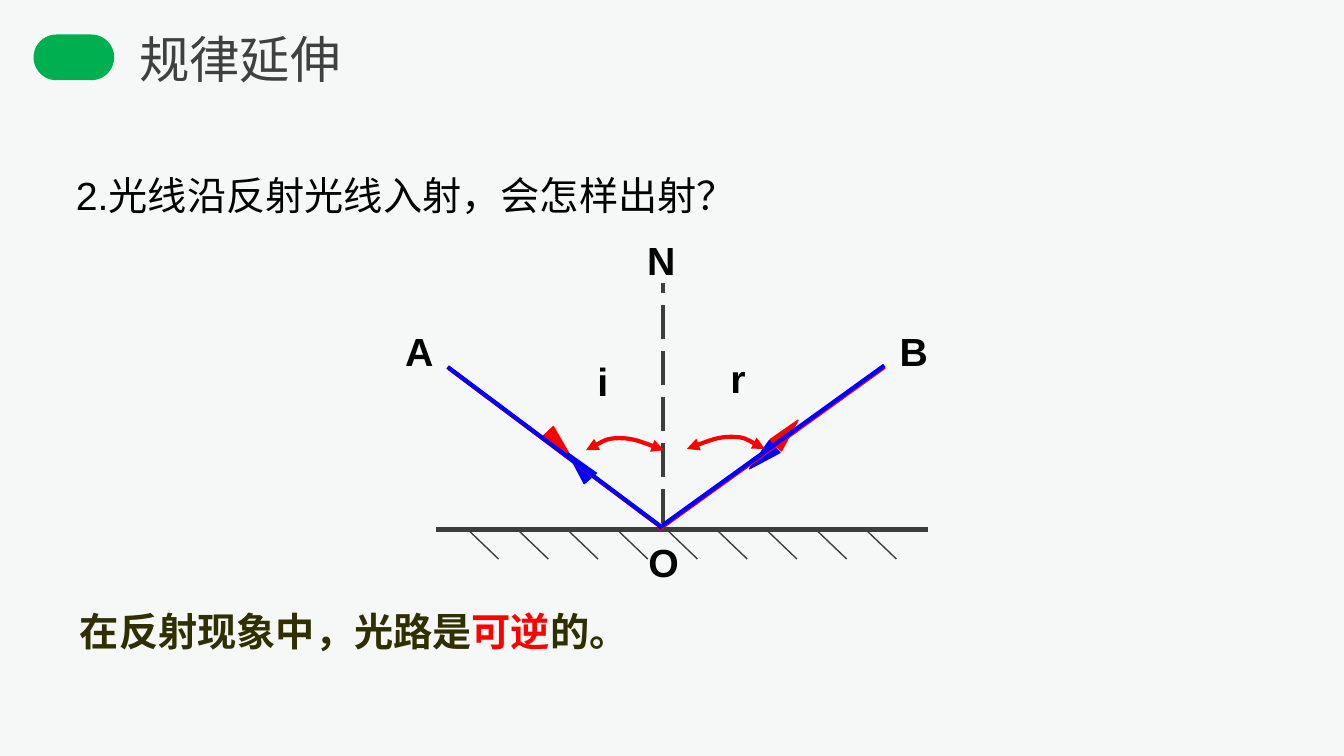
from dataclasses import dataclass

from lxml.etree import SubElement
from pptx import Presentation
from pptx.dml.color import RGBColor
from pptx.enum.dml import MSO_LINE
from pptx.enum.shapes import MSO_CONNECTOR, MSO_SHAPE
from pptx.oxml.ns import qn
from pptx.util import Pt


@dataclass(frozen=True)
class Theme:
    background: str = "F6F8F8"
    badge: str = "00B050"
    heading: str = "404040"
    ink: str = "000000"
    conclusion: str = "2F2F00"
    mirror: str = "3D3D3D"
    red: str = "FF0000"
    blue: str = "0000FF"
    font: str = "Arial"
    heading_size: float = 27
    body_size: float = 21
    thick: float = 2.25
    thin: float = 0.75


@dataclass(frozen=True)
class Label:
    text: str
    left: float
    top: float
    width: float


@dataclass(frozen=True)
class Ray:
    start: tuple[float, float]
    end: tuple[float, float]
    color: str


@dataclass(frozen=True)
class RayTip:
    left: float
    top: float
    rotation: float
    color: str
    apex: float = 0.5


@dataclass(frozen=True)
class AngleArc:
    left_foot: tuple[float, float]
    direction: int


THEME = Theme()

POINT_LABELS = [
    Label("O", 342, 285.8, 28),
    Label("A", 211.7, 172.8, 24.5),
    Label("N", 341.3, 123.8, 24.5),
    Label("B", 476.6, 172.8, 24.5),
    Label("i", 314.6, 188.6, 28),
    Label("r", 385.9, 187.2, 17.3),
]
ANGLE_ARCS = [AngleArc((313.9, 241.2), 1), AngleArc((409.7, 240.5), -1)]
ARC_OFFSETS = [(5.8, -2.9), (10.8, -6.5), (18, -6.5),
               (25.2, -6.5), (33.9, -2.9), (41.8, 0)]
RAY_TIPS = [
    RayTip(295.2, 229, 136.7, THEME.red),
    RayTip(417.6, 223.2, 44.8, THEME.red, 0.385),
    RayTip(306, 240.5, 318.8, THEME.blue),
    RayTip(403.9, 236.2, 228.6, THEME.blue),
]
RAYS = [
    Ray((240.5, 197.3), (355, 283), THEME.red),
    Ray((473.8, 196.6), (352.8, 283.7), THEME.red),
    Ray((239.8, 196.6), (354.2, 282.2), THEME.blue),
    Ray((473.8, 195.8), (352.8, 283), THEME.blue),
]
MIRROR_Y = 283.7
HATCH_COUNT, HATCH_LEFT, HATCH_STEP = 9, 250.6, 26.64
HATCH_WIDTH, HATCH_HEIGHT = 16.5, 15.8


def rgb(color: str) -> RGBColor:
    return RGBColor.from_string(color)


def add_text(slide, text, *, left: float, top: float, width: float,
             height: float = 31, size: float = THEME.body_size,
             color: str = THEME.ink, bold: bool = False, wrap: bool = True):
    """Text is a string, or a list of (string, color) pairs."""
    frame = slide.shapes.add_textbox(
        Pt(left), Pt(top), Pt(width), Pt(height)).text_frame
    frame.word_wrap = wrap
    frame.margin_left = frame.margin_right = Pt(5.4)
    frame.margin_top = frame.margin_bottom = Pt(2.7)
    parts = [(text, color)] if isinstance(text, str) else text
    for words, part_color in parts:
        run = frame.paragraphs[0].add_run()
        run.text = words
        run.font.name = THEME.font
        run.font.size = Pt(size)
        run.font.bold = bold
        run.font.color.rgb = rgb(part_color)


def add_line(slide, start: tuple[float, float], end: tuple[float, float],
             color: str, weight: float = THEME.thick, dash=None):
    line = slide.shapes.add_connector(
        MSO_CONNECTOR.STRAIGHT, *map(Pt, start), *map(Pt, end))
    line.line.color.rgb = rgb(color)
    line.line.width = Pt(weight)
    if dash is not None:
        line.line.dash_style = dash
    SubElement(line._element.spPr, qn("a:effectLst"))


def add_ray_tip(slide, tip: RayTip):
    triangle = slide.shapes.add_shape(
        MSO_SHAPE.ISOSCELES_TRIANGLE, Pt(tip.left), Pt(tip.top), Pt(8.6), Pt(18))
    triangle.adjustments[0] = tip.apex
    triangle.rotation = tip.rotation
    triangle.shadow.inherit = False
    triangle.fill.solid()
    triangle.fill.fore_color.rgb = rgb(tip.color)
    triangle.line.color.rgb = rgb(tip.color)
    triangle.line.width = Pt(THEME.thin)


def add_angle_arc(slide, arc: AngleArc):
    x, y = arc.left_foot
    builder = slide.shapes.build_freeform(Pt(x), Pt(y))
    builder.add_line_segments(
        [(Pt(x + arc.direction * dx), Pt(y + dy)) for dx, dy in ARC_OFFSETS],
        close=False)
    curve = builder.convert_to_shape()
    curve.shadow.inherit = False
    curve.fill.background()
    curve.line.color.rgb = rgb(THEME.red)
    curve.line.width = Pt(THEME.thick)

    # Every three points make one Bézier segment
    outline = next(curve._element.iter(qn("a:path")))
    segments = outline.findall(qn("a:lnTo"))
    for first in range(0, len(segments), 3):
        bezier = SubElement(outline, qn("a:cubicBezTo"))
        for segment in segments[first:first + 3]:
            bezier.append(segment[0])
            outline.remove(segment)

    # Arrowheads at both ends
    stroke = curve._element.spPr.find(qn("a:ln"))
    for end in ("a:headEnd", "a:tailEnd"):
        SubElement(stroke, qn(end), type="triangle")


def main():
    deck = Presentation()
    deck.slide_width, deck.slide_height = Pt(720), Pt(405)
    slide = deck.slides.add_slide(deck.slide_layouts[6])
    slide.background.fill.solid()
    slide.background.fill.fore_color.rgb = rgb(THEME.background)

    # Heading
    badge = slide.shapes.add_shape(
        MSO_SHAPE.ROUNDED_RECTANGLE, Pt(18), Pt(18.5), Pt(43.2), Pt(24.5))
    badge.adjustments[0] = 0.5
    badge.shadow.inherit = False
    badge.fill.solid()
    badge.fill.fore_color.rgb = rgb(THEME.badge)
    badge.line.fill.background()
    add_text(slide, "规律延伸", left=69.1, top=12.2, width=247.7, height=38.2,
             size=THEME.heading_size, color=THEME.heading)

    # Mirror and normal
    add_line(slide, (233.5, MIRROR_Y), (497.3, MIRROR_Y), THEME.mirror)
    for index in range(HATCH_COUNT):
        x = HATCH_LEFT + index * HATCH_STEP
        add_line(slide, (x + HATCH_WIDTH, MIRROR_Y + HATCH_HEIGHT),
                 (x, MIRROR_Y), THEME.mirror, THEME.thin)
    add_line(slide, (355, 280.1), (355, 151.9), THEME.mirror,
             dash=MSO_LINE.LONG_DASH)

    # Labels, angles and light rays
    for label in POINT_LABELS:
        add_text(slide, label.text, left=label.left, top=label.top,
                 width=label.width, bold=True)
    for arc in ANGLE_ARCS:
        add_angle_arc(slide, arc)
    for tip in RAY_TIPS:
        add_ray_tip(slide, tip)
    for ray in RAYS:
        add_line(slide, ray.start, ray.end, ray.color)

    # Question and conclusion
    add_text(slide, "2.光线沿反射光线入射，会怎样出射？",
             left=35.3, top=89.3, width=509, height=56.2)
    add_text(slide, [("在反射现象中，光路是", THEME.conclusion),
                     ("可逆", THEME.red), ("的。", THEME.conclusion)],
             left=37.4, top=322.6, width=316, bold=True, wrap=False)

    deck.save("out.pptx")


if __name__ == "__main__":
    main()
